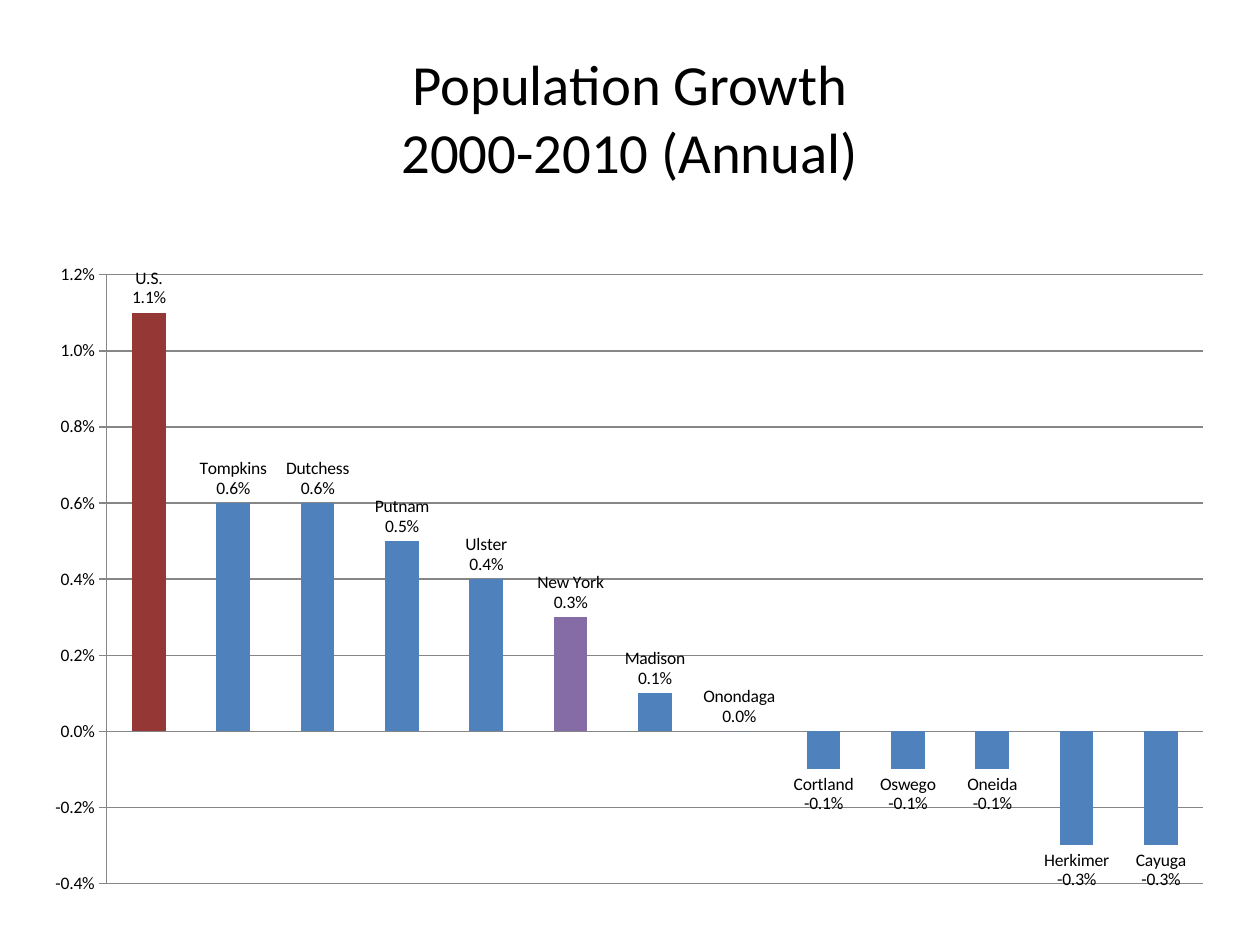
from lxml.etree import SubElement
from pptx import Presentation
from pptx.chart.data import CategoryChartData
from pptx.dml.color import RGBColor
from pptx.enum.chart import XL_CHART_TYPE, XL_LABEL_POSITION, XL_TICK_MARK
from pptx.enum.text import MSO_ANCHOR, MSO_AUTO_SIZE, PP_ALIGN
from pptx.oxml.ns import qn
from pptx.util import Cm, Pt


def color(value):
    return RGBColor.from_string(value)


def write(frame, text, size, fill="000000", name="Calibri", align=PP_ALIGN.CENTER):
    paragraph = frame.paragraphs[0]
    paragraph.text = text
    paragraph.alignment = align
    for span in paragraph.runs:
        span.font.size = Pt(size)
        span.font.name = name
        span.font.color.rgb = color(fill)


deck = Presentation()
deck.slide_width, deck.slide_height = Cm(25.4), Cm(19.05)
page = deck.slides.add_slide(deck.slide_layouts[5])

title = page.shapes.title
title.left, title.top, title.width, title.height = Cm(1.27), Cm(0.76), Cm(22.86), Cm(3.18)
title.text_frame.auto_size = MSO_AUTO_SIZE.NONE
title.text_frame.vertical_anchor = MSO_ANCHOR.MIDDLE
write(title.text_frame, "Population Growth\v2000-2010 (Annual)", size=32.4)

growth = {
    "U.S.": 0.011, "Tompkins": 0.006, "Dutchess": 0.006, "Putnam": 0.005,
    "Ulster": 0.004, "New York": 0.003, "Madison": 0.001, "Onondaga": 0,
    "Cortland": -0.001, "Oswego": -0.001, "Oneida": -0.001,
    "Herkimer": -0.003, "Cayuga": -0.003,
}
data = CategoryChartData(number_format="0.0%")
data.categories = list(growth)
data.add_series("Series 1", list(growth.values()))
chart = page.shapes.add_chart(
    XL_CHART_TYPE.COLUMN_CLUSTERED, Cm(0.66), Cm(5.08), Cm(24.1), Cm(13.18), data
).chart
chart.has_title = False
chart.has_legend = False
chart.font.size = Pt(10)
chart.font.name = "Calibri"
chart.font.color.rgb = color("000000")

plot = chart.plots[0]
plot.gap_width = 150
plot.vary_by_categories = False
series = plot.series[0]
series.invert_if_negative = False
series.format.fill.solid()
series.format.fill.fore_color.rgb = color("4F81BD")
for place, fill in {"U.S.": "953735", "New York": "866CA7"}.items():
    bar = series.points[list(growth).index(place)].format.fill
    bar.solid()
    bar.fore_color.rgb = color(fill)

labels = series.data_labels
labels.show_value = True
labels.show_category_name = True
labels.number_format = "0.0%"
labels.number_format_is_linked = False
labels.position = XL_LABEL_POSITION.OUTSIDE_END
separator = SubElement(labels._element, qn("c:separator"))
separator.text = "\n"
labels._element.find(qn("c:showBubbleSize")).addnext(separator)

chart.category_axis.visible = False
axis = chart.value_axis
axis.minimum_scale, axis.maximum_scale, axis.major_unit = -0.004, 0.012, 0.002
axis.major_tick_mark = XL_TICK_MARK.CROSS
axis.minor_tick_mark = XL_TICK_MARK.NONE
axis.tick_labels.number_format = "0.0%"
axis.tick_labels.number_format_is_linked = False
axis.has_major_gridlines = True
for line in (axis.format.line, axis.major_gridlines.format.line):
    line.color.rgb = color("868686")
    line.width = Pt(0.75)

area = chart._chartSpace.chart.plotArea
for old in area.findall(qn("c:layout")):
    area.remove(old)
layout = SubElement(area, qn("c:layout"))
area.insert(0, layout)
manual = SubElement(layout, qn("c:manualLayout"))
for tag, value in (
    ("layoutTarget", "inner"), ("xMode", "edge"), ("yMode", "edge"),
    ("x", "0.062"), ("y", "0.035"), ("w", "0.917"), ("h", "0.931"),
):
    SubElement(manual, qn(f"c:{tag}")).set("val", value)

deck.save("out.pptx")
